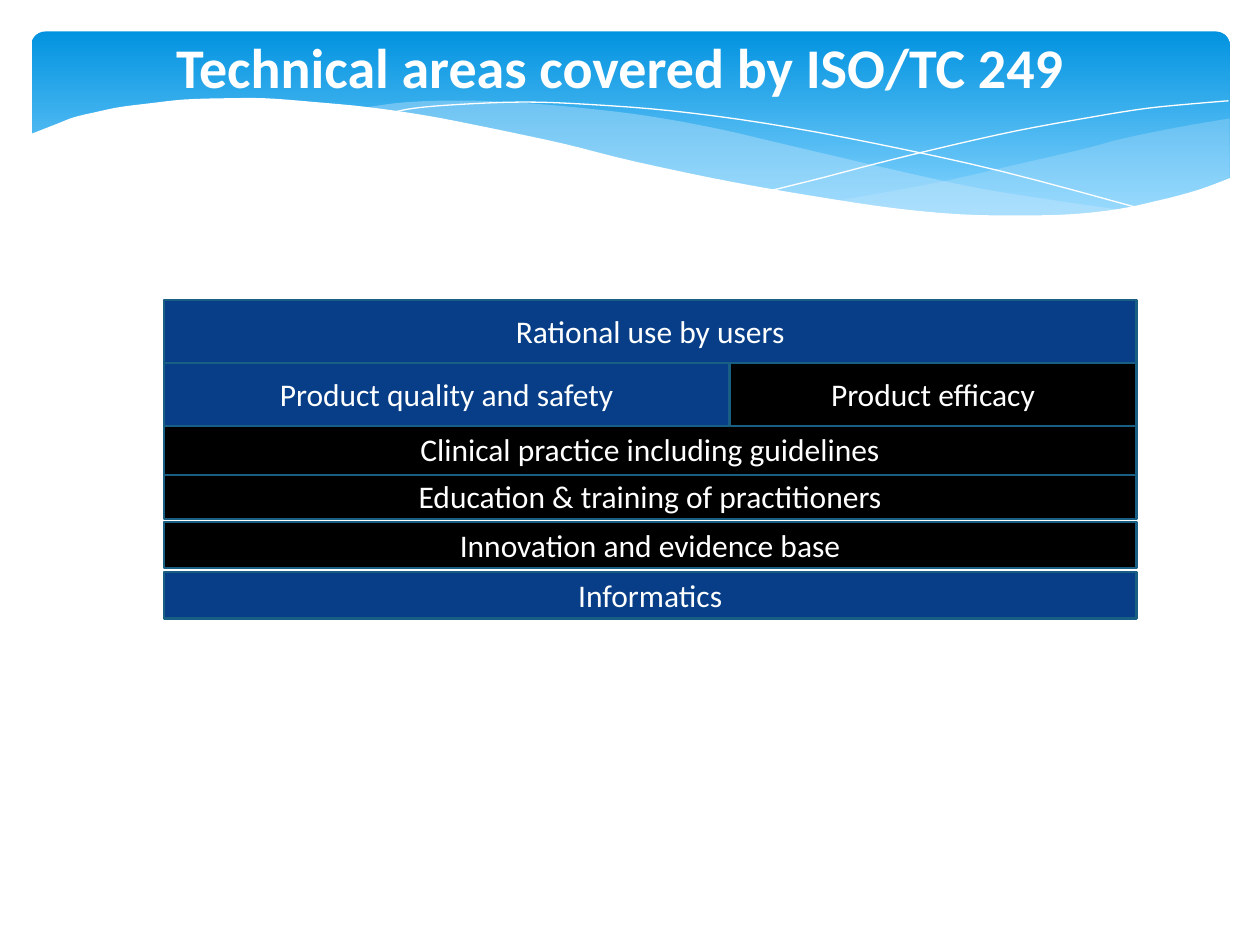
from dataclasses import dataclass

from lxml.etree import SubElement
from pptx import Presentation
from pptx.dml.color import RGBColor
from pptx.enum.shapes import MSO_SHAPE
from pptx.enum.text import MSO_ANCHOR, MSO_AUTO_SIZE, PP_ALIGN
from pptx.oxml.ns import qn
from pptx.util import Inches, Pt

WHITE, BLUE, BLACK, EDGE, MIST = "FFFFFF", "073E87", "000000", "195F84", "C6E7FC"
FONT = "Calibri"
LEFT, WIDTH, SPLIT = 1.3, 7.72, 4.49

Points = list[tuple[float, float]]


@dataclass
class Area:
    text: str
    top: float
    height: float
    color: str
    left: float = LEFT
    width: float = WIDTH


@dataclass
class Wave:
    curves: list[Points]
    fill: str | None = None
    opacity: int = 100


AREAS = [
    Area("Rational use by users", 2.38, 0.5, BLUE),
    Area("Informatics", 4.54, 0.37, BLUE),
    Area("Education & training of practitioners", 3.75, 0.37, BLACK),
    Area("Innovation and evidence base", 4.14, 0.37, BLACK),
    Area("Clinical practice including guidelines", 3.36, 0.41, BLACK),
    Area("Product quality and safety", 2.88, 0.5, BLUE, width=SPLIT),
    Area("Product efficacy", 2.88, 0.5, BLACK, LEFT + SPLIT, WIDTH - SPLIT),
]

WAVES = [
    Wave([
        [(9.76, 0.94), (9.35, 1.01), (8.91, 1.1), (8.61, 1.18), (8.05, 1.31),
         (7.53, 1.43), (7.06, 1.52), (6.61, 1.6)],
        [(6.61, 1.6), (7.05, 1.65), (7.45, 1.69), (7.81, 1.72), (8.24, 1.72),
         (8.63, 1.7), (8.97, 1.65), (9.35, 1.56), (9.76, 1.41)],
    ], MIST, 29),
    Wave([
        [(8.93, 1.67), (8.37, 1.59), (7.75, 1.49), (7.06, 1.34), (6.29, 1.16),
         (5.69, 1.02), (5.14, 0.92), (4.65, 0.86), (4.2, 0.82), (3.8, 0.8),
         (3.44, 0.8), (3.13, 0.82), (2.86, 0.86)],
        [(2.86, 0.86), (3.42, 0.94), (4.04, 1.06), (4.49, 1.16), (5.3, 1.35),
         (6.01, 1.5), (6.65, 1.61), (7.22, 1.68), (7.73, 1.72), (8.18, 1.73),
         (8.57, 1.71), (8.93, 1.67)],
    ], MIST, 40),
    Wave([
        [(3.09, 0.9), (3.28, 0.86), (3.63, 0.83), (4.16, 0.81), (4.69, 0.83),
         (5.33, 0.88), (6.08, 0.98), (6.95, 1.14), (7.95, 1.36), (9.07, 1.66)],
    ]),
    Wave([
        [(6.13, 1.51), (6.53, 1.41), (6.95, 1.3), (7.48, 1.17), (8.06, 1.04),
         (8.66, 0.93), (9.1, 0.86), (9.51, 0.82), (9.75, 0.8)],
    ]),
    Wave([
        [(9.77, 1.41), (9.5, 1.51), (9.2, 1.59), (8.87, 1.66), (8.5, 1.7),
         (8.09, 1.71), (7.61, 1.7), (7.08, 1.65), (6.48, 1.56), (5.79, 1.44),
         (5.03, 1.28), (4.47, 1.14), (3.91, 1.02), (3.4, 0.92), (2.92, 0.85),
         (2.5, 0.81), (2.11, 0.78), (1.77, 0.78), (1.46, 0.79), (1.19, 0.82),
         (0.95, 0.85), (0.76, 0.89), (0.59, 0.93), (0.46, 0.98), (0.23, 1.07)],
        [(0.23, 2.24), (9.77, 2.24)],
    ], WHITE),
]


def rgb(color: str) -> RGBColor:
    return RGBColor.from_string(color)


def smooth(knots: Points, steps: int = 4) -> Points:
    ext = [knots[0], *knots, knots[-1]]
    out = [knots[0]]
    for a, b, c, d in zip(ext, ext[1:], ext[2:], ext[3:]):
        for i in range(1, steps + 1):
            t = i / steps
            x, y = (
                (2 * q + (r - p) * t + (2 * p - 5 * q + 4 * r - s) * t**2
                 + (3 * q - p - 3 * r + s) * t**3) / 2
                for p, q, r, s in zip(a, b, c, d)
            )
            out.append((x, y))
    return out


def add_text(tf, text: str, size: int, bold: bool = False) -> None:
    p = tf.paragraphs[0]
    r = p.add_run()
    r.text = text
    r.font.name = FONT
    r.font.size = Pt(size)
    r.font.bold = bold
    r.font.color.rgb = rgb(WHITE)


def draw_banner(s) -> None:
    sp = s.shapes.add_shape(MSO_SHAPE.ROUNDED_RECTANGLE, Inches(0.25), Inches(0.25),
                            Inches(9.51), Inches(1.56))
    sp.shadow.inherit = False
    sp.adjustments[0] = 0.07
    sp.line.fill.background()
    sp.fill.gradient()
    sp.fill.gradient_angle = 270
    for stop, position, color in zip(sp.fill.gradient_stops, (0, 0.9), ("0293E0", "83D3FE")):
        stop.position = position
        stop.color.rgb = rgb(color)


def draw_wave(s, wave: Wave) -> None:
    points = [(Inches(x), Inches(y)) for curve in wave.curves
              for x, y in (smooth(curve) if len(curve) > 2 else curve)]
    builder = s.shapes.build_freeform(*points[0])
    builder.add_line_segments(points[1:], close=wave.fill is not None)
    sp = builder.convert_to_shape()
    sp.shadow.inherit = False
    if wave.fill is None:
        sp.fill.background()
        sp.line.color.rgb = rgb(WHITE)
        sp.line.width = Pt(0)
        return
    sp.line.fill.background()
    sp.fill.solid()
    sp.fill.fore_color.rgb = rgb(wave.fill)
    if wave.opacity < 100:
        color = sp.element.spPr.find(qn("a:solidFill")).find(qn("a:srgbClr"))
        SubElement(color, qn("a:alpha"), val=str(wave.opacity * 1000))


def draw_area(s, area: Area) -> None:
    sp = s.shapes.add_shape(MSO_SHAPE.RECTANGLE, Inches(area.left), Inches(area.top),
                            Inches(area.width), Inches(area.height))
    sp.shadow.inherit = False
    sp.fill.solid()
    sp.fill.fore_color.rgb = rgb(area.color)
    sp.line.color.rgb = rgb(EDGE)
    sp.line.width = Pt(1.25)
    tf = sp.text_frame
    tf.vertical_anchor = MSO_ANCHOR.MIDDLE
    tf.paragraphs[0].alignment = PP_ALIGN.CENTER
    add_text(tf, area.text, 18)


def draw_title(s) -> None:
    sp = s.shapes.add_textbox(Inches(LEFT), Inches(0.21), Inches(9.37), Inches(0.64))
    tf = sp.text_frame
    tf.word_wrap = True
    tf.auto_size = MSO_AUTO_SIZE.SHAPE_TO_FIT_TEXT
    add_text(tf, "Technical areas covered by ISO/TC 249", 32, bold=True)


def main() -> None:
    prs = Presentation()
    prs.slide_width, prs.slide_height = Inches(10), Inches(7.5)
    s = prs.slides.add_slide(prs.slide_layouts[6])
    draw_banner(s)
    for wave in WAVES:
        draw_wave(s, wave)
    for area in AREAS:
        draw_area(s, area)
    draw_title(s)
    prs.save("out.pptx")


if __name__ == "__main__":
    main()
